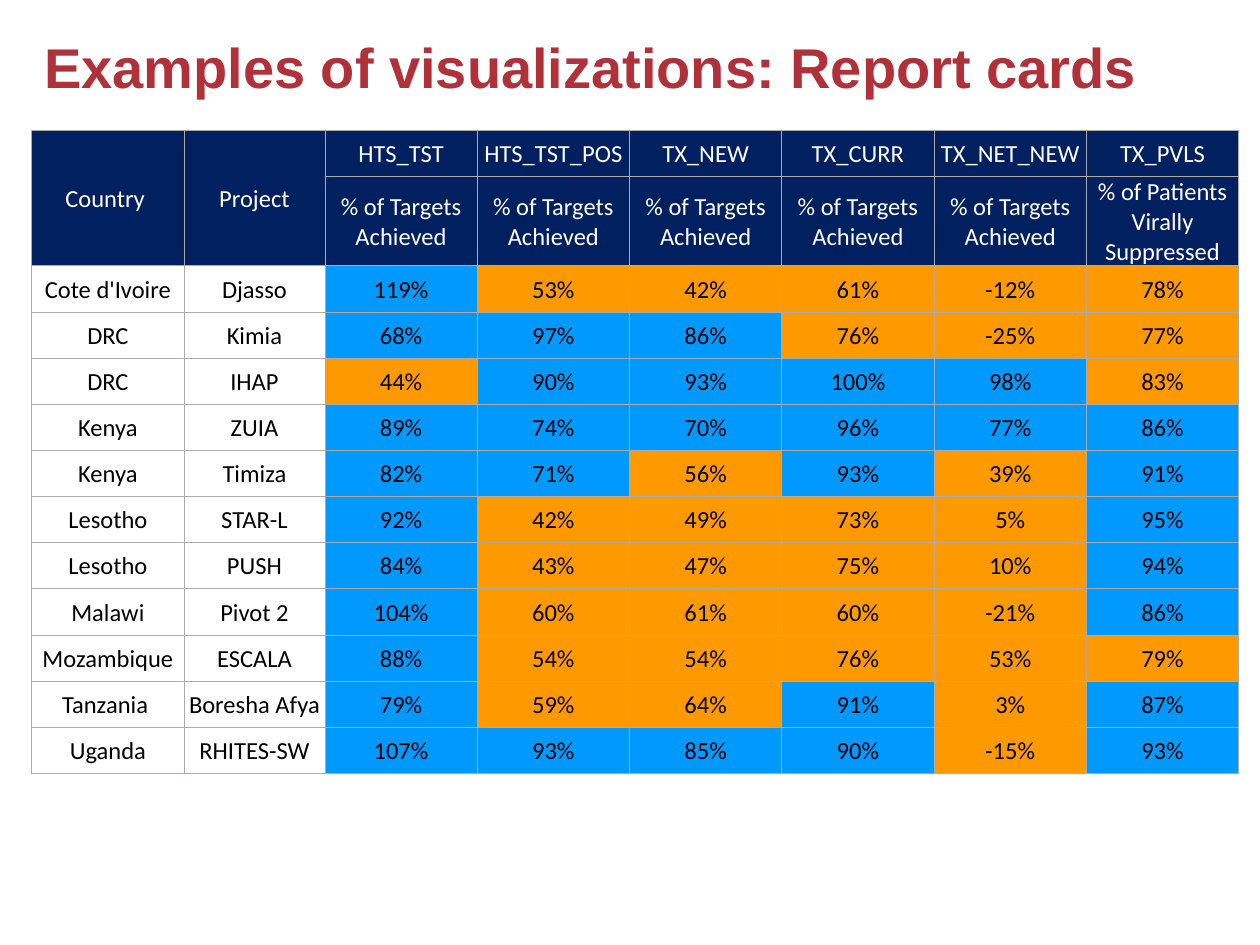
from pptx import Presentation
from pptx.dml.color import RGBColor
from pptx.enum.text import MSO_ANCHOR, PP_ALIGN
from pptx.oxml import parse_xml
from pptx.oxml.ns import nsdecls
from pptx.util import Cm, Pt

NAVY, WHITE, BLACK = "002060", "FFFFFF", "000000"
BLUE, ORANGE, RED, GREY = "0099FF", "FF9900", "B03139", "AEAAAA"

WIDTHS = [3.07, 2.84] + [3.07] * 6
HEIGHTS = [0.93, 1.63] + [0.93] * 11
GOALS = [65, 65, 65, 85, 65, 85]
HEADS = [
    ["Country ", "Project", "HTS_TST", "HTS_TST_POS", "TX_NEW", "TX_CURR",
     "TX_NET_NEW", "TX_PVLS"],
    ["", ""] + ["% of Targets Achieved"] * 5 + ["% of Patients Virally Suppressed"],
]
SCORES = [
    ("Cote d'Ivoire", "Djasso", 119, 53, 42, 61, -12, 78),
    ("DRC", "Kimia", 68, 97, 86, 76, -25, 77),
    ("DRC", "IHAP", 44, 90, 93, 100, 98, 83),
    ("Kenya", "ZUIA", 89, 74, 70, 96, 77, 86),
    ("Kenya", "Timiza", 82, 71, 56, 93, 39, 91),
    ("Lesotho", "STAR-L", 92, 42, 49, 73, 5, 95),
    ("Lesotho", "PUSH", 84, 43, 47, 75, 10, 94),
    ("Malawi", "Pivot 2", 104, 60, 61, 60, -21, 86),
    ("Mozambique", "ESCALA", 88, 54, 54, 76, 53, 79),
    ("Tanzania ", "Boresha Afya", 79, 59, 64, 91, 3, 87),
    ("Uganda", "RHITES-SW", 107, 93, 85, 90, -15, 93),
]


def color(code):
    """Turn a hex string into a colour."""
    return RGBColor.from_string(code)


def write(frame, text, code, **looks):
    """Put one styled run of text in a frame."""
    run = frame.paragraphs[0].add_run()
    run.text = text
    run.font.color.rgb = color(code)
    for name, value in looks.items():
        setattr(run.font, name, value)


def add_title(slide, text):
    """Add the slide heading."""
    box = slide.shapes.add_textbox(Cm(0.64), Cm(0.69), Cm(24.31), Cm(1.3))
    frame = box.text_frame
    frame.word_wrap = True
    frame.vertical_anchor = MSO_ANCHOR.MIDDLE
    write(frame, text, RED, name="Arial", size=Pt(32), bold=True)


def add_edges(cell):
    """Draw a thin grey line on all four sides of a cell."""
    props = cell._tc.get_or_add_tcPr()
    for side in ("lnL", "lnR", "lnT", "lnB"):
        props.append(parse_xml(
            f'<a:{side} {nsdecls("a")} w="{Pt(0.5)}"><a:solidFill>'
            f'<a:srgbClr val="{GREY}"/></a:solidFill></a:{side}>'))


def fill_cell(cell, text, back, ink):
    """Style one table cell and write its text."""
    looks = {
        "margin_left": Cm(0.03), "margin_right": Cm(0.03),
        "margin_top": Cm(0.03), "margin_bottom": Cm(0),
        "vertical_anchor": MSO_ANCHOR.MIDDLE,
    }
    for name, value in looks.items():
        setattr(cell, name, value)
    add_edges(cell)
    cell.fill.solid()
    cell.fill.fore_color.rgb = color(back)
    cell.text_frame.paragraphs[0].alignment = PP_ALIGN.CENTER
    if text:
        write(cell.text_frame, text, ink, name="Calibri", size=Pt(14))


def add_card(slide):
    """Add the report card, with scores coloured against their goals."""
    shape = slide.shapes.add_table(
        len(HEIGHTS), len(WIDTHS), Cm(0.64), Cm(2.62),
        Cm(sum(WIDTHS)), Cm(sum(HEIGHTS)))
    table = shape.table
    table.first_row = table.horz_banding = False
    for column, width in zip(table.columns, WIDTHS):
        column.width = Cm(width)
    for row, height in zip(table.rows, HEIGHTS):
        row.height = Cm(height)
    for r, heads in enumerate(HEADS):
        for c, text in enumerate(heads):
            fill_cell(table.cell(r, c), text, NAVY, WHITE)
    for c in range(2):
        table.cell(0, c).merge(table.cell(1, c))
    for r, (land, project, *scores) in enumerate(SCORES, len(HEADS)):
        for c, text in enumerate((land, project)):
            fill_cell(table.cell(r, c), text, WHITE, BLACK)
        for c, (score, goal) in enumerate(zip(scores, GOALS), 2):
            back = BLUE if score >= goal else ORANGE
            fill_cell(table.cell(r, c), f"{score}%", back, BLACK)


def main():
    """Build and save the slide."""
    deck = Presentation()
    deck.slide_width, deck.slide_height = Cm(25.4), Cm(19.05)
    slide = deck.slides.add_slide(deck.slide_layouts[6])
    add_title(slide, "Examples of visualizations: Report cards")
    add_card(slide)
    deck.save("out.pptx")


if __name__ == "__main__":
    main()
